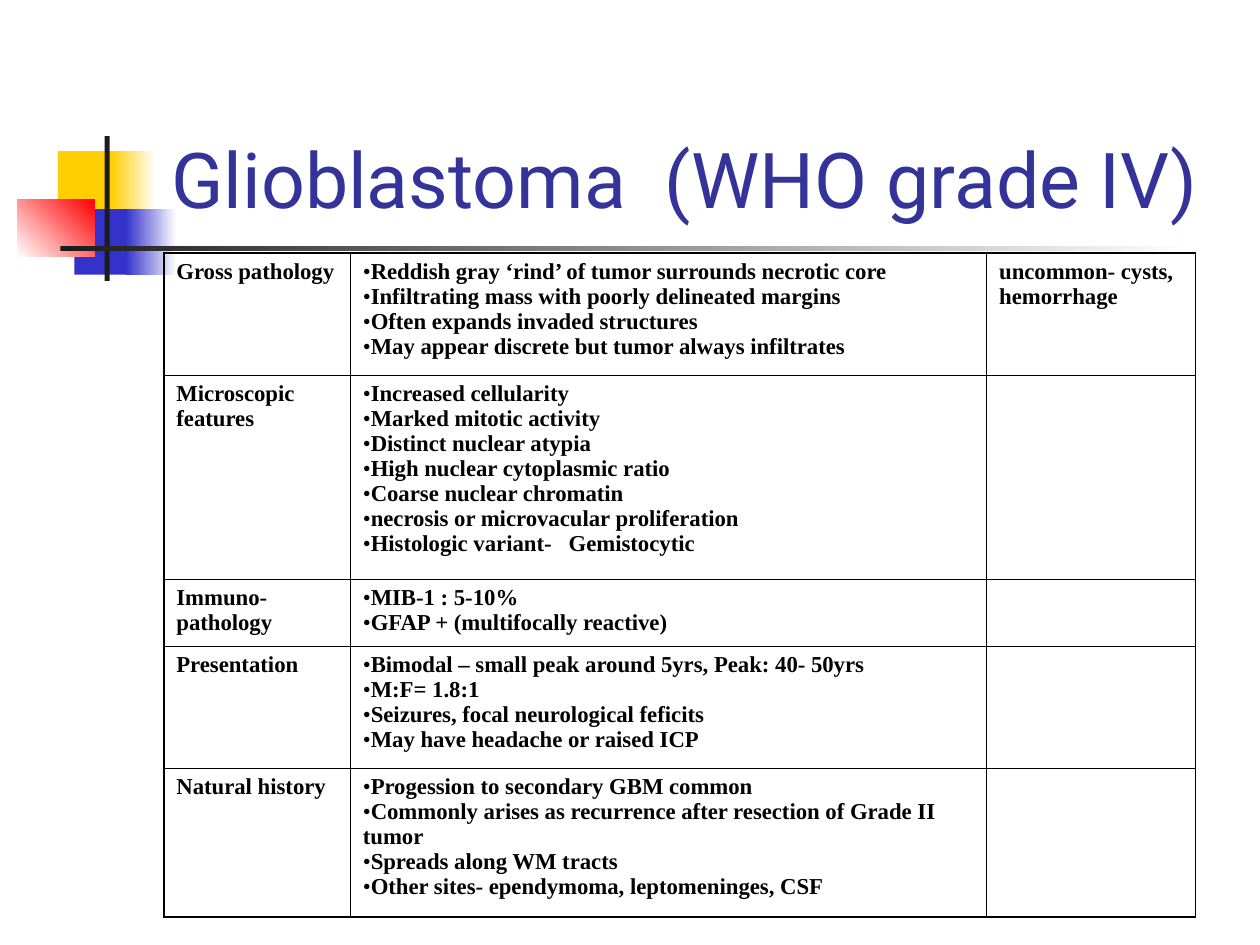
from lxml import etree
from pptx import Presentation
from pptx import util as u
from pptx.dml.color import RGBColor
from pptx.enum import shapes, text
from pptx.oxml import ns

COLORS = {"yellow": "FFCF01", "blue": "3333CC", "red": "FF0000", "dark": "1C1C1C",
          "white": "FFFFFF", "black": "000000", "title": "333399"}

# left, top, width, height inside the ornament; colours (two make a gradient); angle
ORNAMENT = [
    (0.32, 0.12, 0.48, 0.52, ["yellow"], 0),
    (0.74, 0.12, 0.36, 0.52, ["yellow", "white"], 0),
    (0.45, 0.58, 0.46, 0.52, ["blue"], 0),
    (0.86, 0.58, 0.40, 0.52, ["blue", "white"], 0),
    (0.00, 0.50, 0.61, 0.46, ["white", "red"], 45),
    (0.69, 0.00, 0.04, 1.15, ["dark"], 0),
    (0.34, 0.87, 9.00, 0.04, ["dark", "white"], 0),
]

COLUMN_WIDTHS = [1.48, 5.05, 1.66]
# row height, heading, findings, remark
ROWS = [
    (0.97, "Gross pathology",
     ["Reddish gray ‘rind’ of tumor surrounds necrotic core",
      "Infiltrating mass with poorly delineated margins",
      "Often expands invaded structures",
      "May appear discrete but tumor always infiltrates"],
     "uncommon- cysts, hemorrhage"),
    (1.62, "Microscopic features",
     ["Increased cellularity",
      "Marked mitotic activity",
      "Distinct nuclear atypia",
      "High nuclear cytoplasmic ratio",
      "Coarse nuclear chromatin",
      "necrosis or microvacular proliferation",
      "Histologic variant-   Gemistocytic"], ""),
    (0.53, "Immuno-pathology",
     ["MIB-1 : 5-10%",
      "GFAP + (multifocally reactive)"], ""),
    (0.97, "Presentation",
     ["Bimodal – small peak around 5yrs, Peak: 40- 50yrs",
      "M:F= 1.8:1",
      "Seizures, focal neurological feficits",
      "May have headache or raised ICP"], ""),
    (1.18, "Natural history",
     ["Progession to secondary GBM common",
      "Commonly arises as recurrence after resection of Grade II tumor",
      "Spreads along WM tracts",
      "Other sites- ependymoma, leptomeninges, CSF"], ""),
]

TITLE_FONT = {"name": "Roboto", "size": u.Pt(44), "bold": False}
CELL_FONT = {"name": "Times New Roman", "size": u.Pt(13), "bold": True}


def rgb(name):
    return RGBColor.from_string(COLORS[name])


def format_font(font, values, color):
    for name, value in values.items():
        setattr(font, name, value)
    font.color.rgb = rgb(color)


def add_ornament(page, left, top):
    for dx, dy, width, height, colors, angle in ORNAMENT:
        box = page.shapes.add_shape(
            shapes.MSO_SHAPE.RECTANGLE, u.Inches(left + dx), u.Inches(top + dy),
            u.Inches(width), u.Inches(height))
        box.shadow.inherit = False
        box.line.fill.background()
        if len(colors) == 1:
            box.fill.solid()
            box.fill.fore_color.rgb = rgb(colors[0])
        else:
            box.fill.gradient()
            box.fill.gradient_angle = angle
            for stop, color in zip(box.fill.gradient_stops, colors):
                stop.color.rgb = rgb(color)


def place_title(page, words, left, top, width, height):
    title = page.shapes.title
    frame = {"left": left, "top": top, "width": width, "height": height}
    for name, value in frame.items():
        setattr(title, name, u.Inches(value))
    title.text_frame.text = words
    title.text_frame.auto_size = text.MSO_AUTO_SIZE.NONE
    title.text_frame.vertical_anchor = text.MSO_ANCHOR.BOTTOM
    para = title.text_frame.paragraphs[0]
    para.alignment = text.PP_ALIGN.LEFT
    format_font(para.runs[0].font, TITLE_FONT, "title")


def add_borders(cell):
    props = cell._tc.get_or_add_tcPr()
    for side in ("lnL", "lnR", "lnT", "lnB"):
        line = etree.SubElement(props, ns.qn(f"a:{side}"), w=str(u.Pt(1)))
        fill = etree.SubElement(line, ns.qn("a:solidFill"))
        etree.SubElement(fill, ns.qn("a:srgbClr"), val=COLORS["black"])


def add_bullet(para):
    props = para._p.get_or_add_pPr()
    props.set("marL", "0")
    props.set("indent", "0")
    etree.SubElement(props, ns.qn("a:buFont"), typeface=CELL_FONT["name"])
    etree.SubElement(props, ns.qn("a:buChar"), char="•")


def fill_cell(cell, lines, bulleted):
    add_borders(cell)
    cell.fill.background()
    cell.text_frame.text = "\n".join(lines)
    for para in cell.text_frame.paragraphs:
        if bulleted:
            add_bullet(para)
        for span in para.runs:
            format_font(span.font, CELL_FONT, "black")


def add_findings_table(page, left, top):
    heights = [row[0] for row in ROWS]
    table = page.shapes.add_table(
        len(ROWS), len(COLUMN_WIDTHS), u.Inches(left), u.Inches(top),
        u.Inches(sum(COLUMN_WIDTHS)), u.Inches(sum(heights))).table
    table.first_row = table.horz_banding = False
    for column, width in zip(table.columns, COLUMN_WIDTHS):
        column.width = u.Inches(width)
    for row, (height, heading, findings, remark) in zip(table.rows, ROWS):
        row.height = u.Inches(height)
        for cell, lines in zip(row.cells, ([heading], findings, [remark])):
            fill_cell(cell, lines, bulleted=lines is findings)


def main():
    deck = Presentation()
    deck.slide_width, deck.slide_height = u.Inches(10), u.Inches(7.5)
    page = deck.slides.add_slide(deck.slide_layouts[5])
    add_ornament(page, 0.14, 1.08)
    add_findings_table(page, 1.3, 2.01)
    place_title(page, "Glioblastoma  (WHO grade IV)", 1.26, 0.23, 8.52, 1.6)
    deck.save("out.pptx")


if __name__ == "__main__":
    main()
